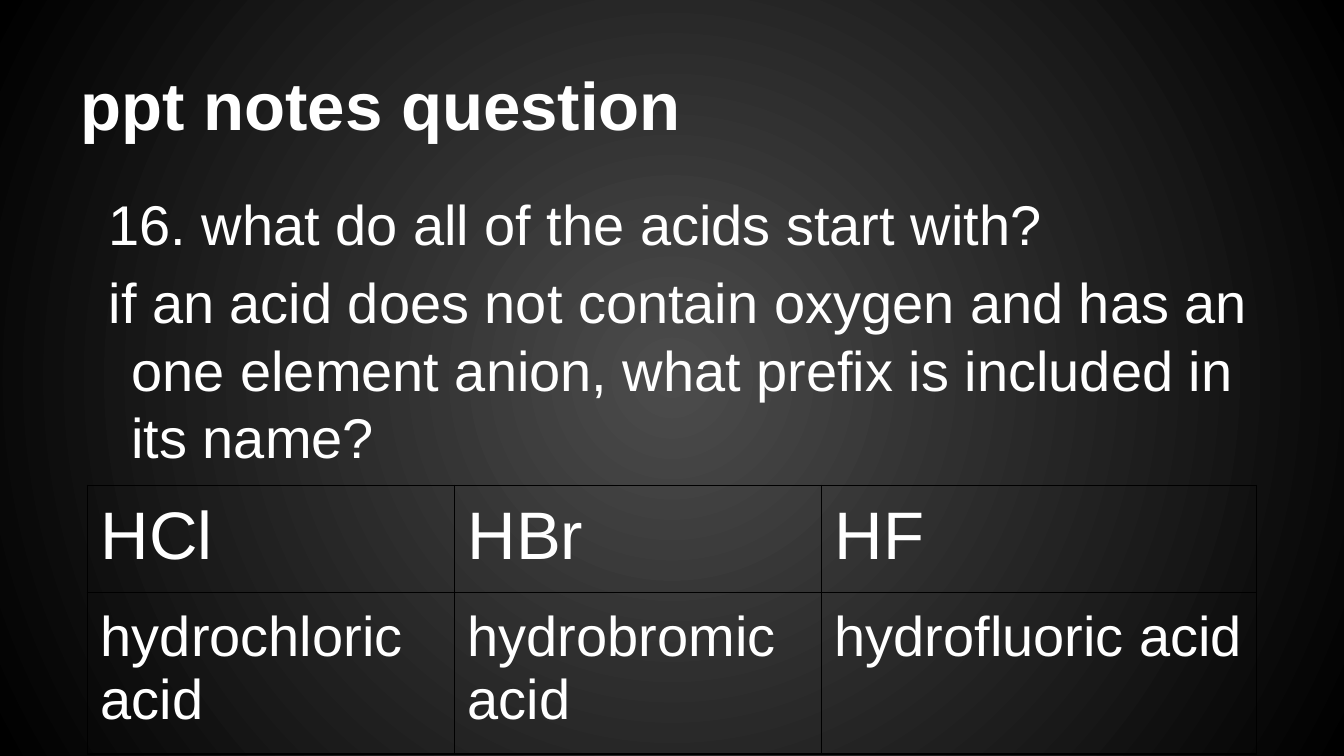
from lxml import etree
from pptx import Presentation
from pptx import util as u
from pptx.dml.color import RGBColor
from pptx.enum import text
from pptx.oxml.ns import qn

COLORS = {"center": "4C4C4C", "edge": "000000", "text": "FFFFFF", "border": "000000"}
INSET = u.Inches(0.1)


class Deck:
    font = "Arial"

    def __init__(self, width, height):
        self.prs = Presentation()
        self.prs.slide_width, self.prs.slide_height = u.Inches(width), u.Inches(height)
        self.slide = self.prs.slides.add_slide(self.prs.slide_layouts[6])

    def background(self):
        fill = self.slide.background.fill
        fill.gradient()
        for stop, name, position in zip(fill.gradient_stops, ("center", "edge"), (0, 1)):
            stop.color.rgb = RGBColor.from_string(COLORS[name])
            stop.position = position
        # Turn the linear gradient into a circular one
        gradient = self.slide.element.find(".//" + qn("a:gradFill"))
        gradient.remove(gradient.find(qn("a:lin")))
        circle = etree.SubElement(gradient, qn("a:path"), path="circle")
        etree.SubElement(circle, qn("a:fillToRect"), l="50000", t="50000", r="50000", b="50000")

    def style(self, paragraph, size, bold=False):
        for run in paragraph.runs:
            run.font.name, run.font.size, run.font.bold = self.font, u.Pt(size), bold
            run.font.color.rgb = RGBColor.from_string(COLORS["text"])

    def text_box(self, lines, box, size, bold=False, anchor=text.MSO_ANCHOR.TOP,
                 before=0, margin=0, indent=0):
        frame = self.slide.shapes.add_textbox(*map(u.Inches, box)).text_frame
        frame.word_wrap = True
        frame.vertical_anchor = anchor
        frame.margin_left = frame.margin_right = INSET
        frame.margin_top = frame.margin_bottom = INSET
        frame.text = "\n".join(lines)
        for paragraph in frame.paragraphs:
            paragraph.space_before = u.Pt(before)
            properties = paragraph._p.get_or_add_pPr()
            properties.set("marL", str(u.Inches(margin)))
            properties.set("indent", str(u.Inches(indent)))
            self.style(paragraph, size, bold)

    def table(self, rows, box, widths, heights, sizes):
        holder = self.slide.shapes.add_table(len(rows), len(widths), *map(u.Inches, box))
        table = holder.table
        table.first_row = table.horz_banding = False
        for column, width in zip(table.columns, widths):
            column.width = u.Inches(width)
        for row, height, words, size in zip(table.rows, heights, rows, sizes):
            row.height = u.Inches(height)
            for cell, word in zip(row.cells, words):
                cell.margin_left = cell.margin_right = INSET
                cell.margin_top = cell.margin_bottom = INSET
                cell.text = word
                self.style(cell.text_frame.paragraphs[0], size)
                self.borders(cell)
                cell.fill.background()
        # The frame is a little taller than its rows
        holder.height = u.Inches(box[3])

    def borders(self, cell, width=0.75):
        properties = cell._tc.get_or_add_tcPr()
        for side in ("lnL", "lnR", "lnT", "lnB"):
            line = etree.SubElement(properties, qn(f"a:{side}"), w=str(u.Pt(width)))
            solid = etree.SubElement(line, qn("a:solidFill"))
            etree.SubElement(solid, qn("a:srgbClr"), val=COLORS["border"])


def main():
    deck = Deck(10, 10 * 9 / 16)
    deck.background()

    # Heading
    deck.text_box(["ppt notes question"], (0.5, 0.23, 9, 0.94), 36, bold=True,
                  anchor=text.MSO_ANCHOR.BOTTOM)

    # Questions, with hanging indent
    questions = [
        "16. what do all of the acids start with?",
        "if an acid does not contain oxygen and has an one element anion, "
        "what prefix is included in its name?",
    ]
    deck.text_box(questions, (0.5, 1.31, 9, 4.07), 30, before=6, margin=0.38, indent=-0.17)

    # Acid formulas and names
    acids = {"HCl": "hydrochloric", "HBr": "hydrobromic", "HF": "hydrofluoric"}
    names = [f"{stem} acid" for stem in acids.values()]
    deck.table([list(acids), names], (0.65, 3.61, 8.69, 2),
               (2.73, 2.73, 3.24), (0.77, 1.15), (36, 30))

    deck.prs.save("out.pptx")


if __name__ == "__main__":
    main()
